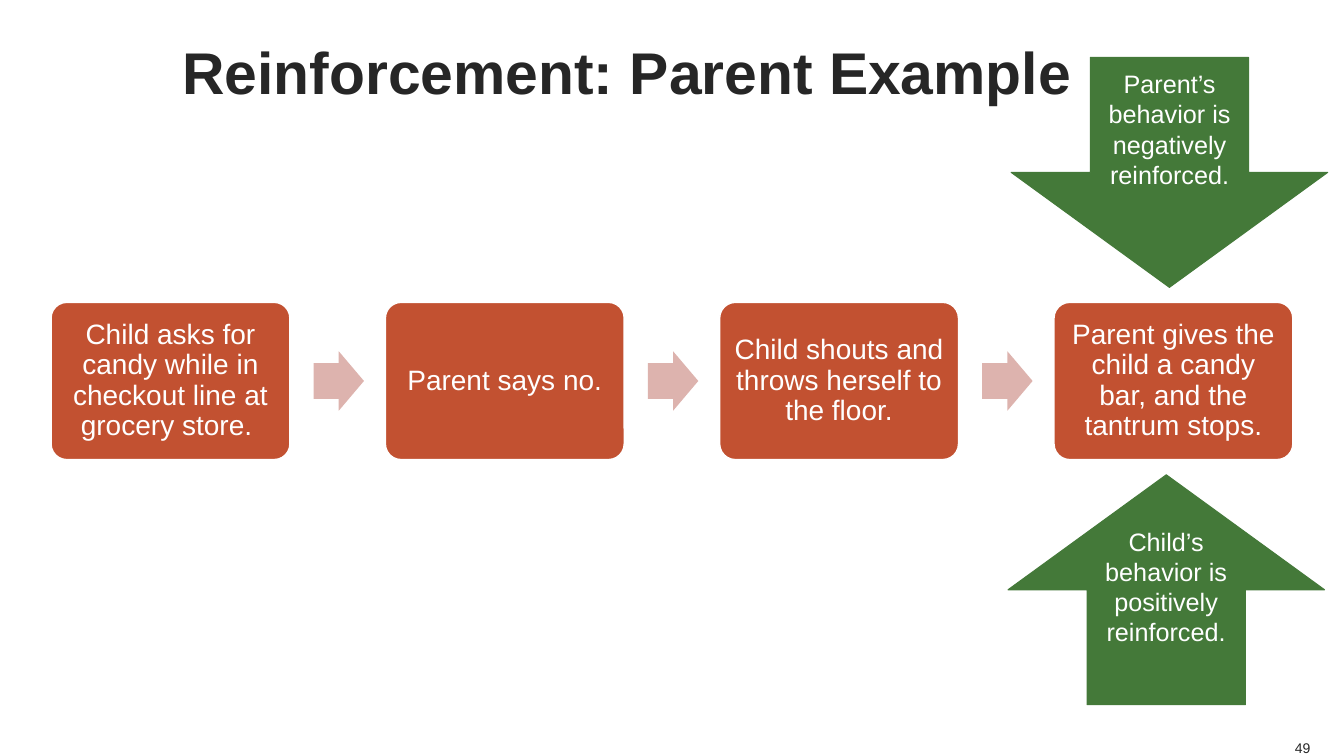
"""Build the slide on reinforcement in a parent and child example."""
from dataclasses import dataclass

import pptx
import pptx.dml.color
import pptx.enum.shapes
import pptx.enum.text
import pptx.util

Pt = pptx.util.Pt
RGBColor = pptx.dml.color.RGBColor
Anchor = pptx.enum.text.MSO_ANCHOR
Align = pptx.enum.text.PP_ALIGN
Preset = pptx.enum.shapes.MSO_SHAPE

WHITE = RGBColor(0xFF, 0xFF, 0xFF)
INK = RGBColor(0x26, 0x26, 0x26)
RUST = RGBColor(0xC2, 0x51, 0x31)
PINK = RGBColor(0xDD, 0xB3, 0xAE)
GREEN = RGBColor(0x44, 0x79, 0x39)

STEP_LEFT, STEP_PITCH = 36.5, 238.8
STEP_TOP, STEP_WIDTH, STEP_HEIGHT = 216, 170.6, 112.3
LINK_OFFSET, LINK_WIDTH, LINK_HEIGHT = 187.5, 36, 42.5
EFFECT_WIDTH, EFFECT_HEIGHT = 164.2, 226.1


@dataclass(frozen=True)
class Area:
    left: float
    top: float
    width: float
    height: float

    def lengths(self) -> tuple:
        return Pt(self.left), Pt(self.top), Pt(self.width), Pt(self.height)


@dataclass(frozen=True)
class Label:
    text: str
    area: Area
    size: float
    color: RGBColor = WHITE
    bold: bool = False
    align: Align = Align.CENTER
    anchor: Anchor = Anchor.TOP
    inset: tuple = (7.2, 3.6)


@dataclass(frozen=True)
class Effect:
    arrow: Area
    rotation: float
    label: Label


STEPS = (
    "Child asks for candy while in checkout line at grocery store. ",
    "Parent says no.",
    "Child shouts and throws herself to the floor.",
    "Parent gives the child a candy bar, and the tantrum stops.",
)
EFFECTS = (
    Effect(
        Area(751, 308.2, EFFECT_WIDTH, EFFECT_HEIGHT), 270,
        Label("Child’s behavior is positively reinforced.", Area(779.3, 372.2, 107.3, 94.3), 18),
    ),
    Effect(
        Area(753.2, 10.1, EFFECT_WIDTH, EFFECT_HEIGHT), 90,
        Label("Parent’s behavior is negatively reinforced.", Area(776.4, 45.4, 118, 94.3), 18),
    ),
)
TITLE = Label("Reinforcement: Parent Example", Area(36, 0, 823.5, 100.8), 42, INK,
              bold=True, anchor=Anchor.MIDDLE, inset=(0, 0))
PAGE_NUMBER = Label("49", Area(912, 527.8, 24, 12.2), 10, INK,
                    align=Align.RIGHT, anchor=Anchor.BOTTOM, inset=(0, 0))


def set_format(target: object, values: dict) -> None:
    for name, value in values.items():
        setattr(target, name, value)


def write(box: object, label: Label, line_spacing: float = 1.0) -> None:
    across, down = map(Pt, label.inset)
    set_format(box.text_frame, {
        "word_wrap": True, "vertical_anchor": label.anchor,
        "margin_left": across, "margin_right": across,
        "margin_top": down, "margin_bottom": down,
    })
    para = box.text_frame.paragraphs[0]
    set_format(para, {"alignment": label.align, "line_spacing": line_spacing})
    span = para.add_run()
    span.text = label.text
    set_format(span.font, {"name": "Arial", "size": Pt(label.size), "bold": label.bold})
    span.font.color.rgb = label.color


def add_label(page: object, label: Label) -> None:
    write(page.shapes.add_textbox(*label.area.lengths()), label)


def add_preset(page: object, preset: Preset, area: Area, fill: RGBColor,
               line: RGBColor | None = None, line_width: float = 1) -> object:
    shape = page.shapes.add_shape(preset, *area.lengths())
    shape.shadow.inherit = False
    shape.fill.solid()
    shape.fill.fore_color.rgb = fill
    if line is None:
        shape.line.fill.background()
    else:
        shape.line.color.rgb = line
        shape.line.width = Pt(line_width)
    return shape


def add_step(page: object, index: int, text: str) -> None:
    left = STEP_LEFT + index * STEP_PITCH
    area = Area(left, STEP_TOP, STEP_WIDTH, STEP_HEIGHT)
    box = add_preset(page, Preset.ROUNDED_RECTANGLE, area, RUST, WHITE)
    box.adjustments[0] = 0.1
    write(box, Label(text, area, 20, anchor=Anchor.MIDDLE, inset=(5.8, 5.8)), 0.9)
    if index < len(STEPS) - 1:
        link_top = STEP_TOP + (STEP_HEIGHT - LINK_HEIGHT) / 2
        link_area = Area(left + LINK_OFFSET, link_top, LINK_WIDTH, LINK_HEIGHT)
        link = add_preset(page, Preset.RIGHT_ARROW, link_area, PINK)
        link.adjustments[0] = 0.6


def add_effect(page: object, effect: Effect) -> None:
    arrow = add_preset(page, Preset.RIGHT_ARROW, effect.arrow, GREEN, GREEN, 0.75)
    arrow.rotation = effect.rotation
    add_label(page, effect.label)


def main() -> None:
    deck = pptx.Presentation()
    set_format(deck, {"slide_width": Pt(960), "slide_height": Pt(540)})
    page = deck.slides.add_slide(deck.slide_layouts[6])
    add_label(page, TITLE)
    for index, text in enumerate(STEPS):
        add_step(page, index, text)
    for effect in EFFECTS:
        add_effect(page, effect)
    add_label(page, PAGE_NUMBER)
    deck.save("out.pptx")


if __name__ == "__main__":
    main()
